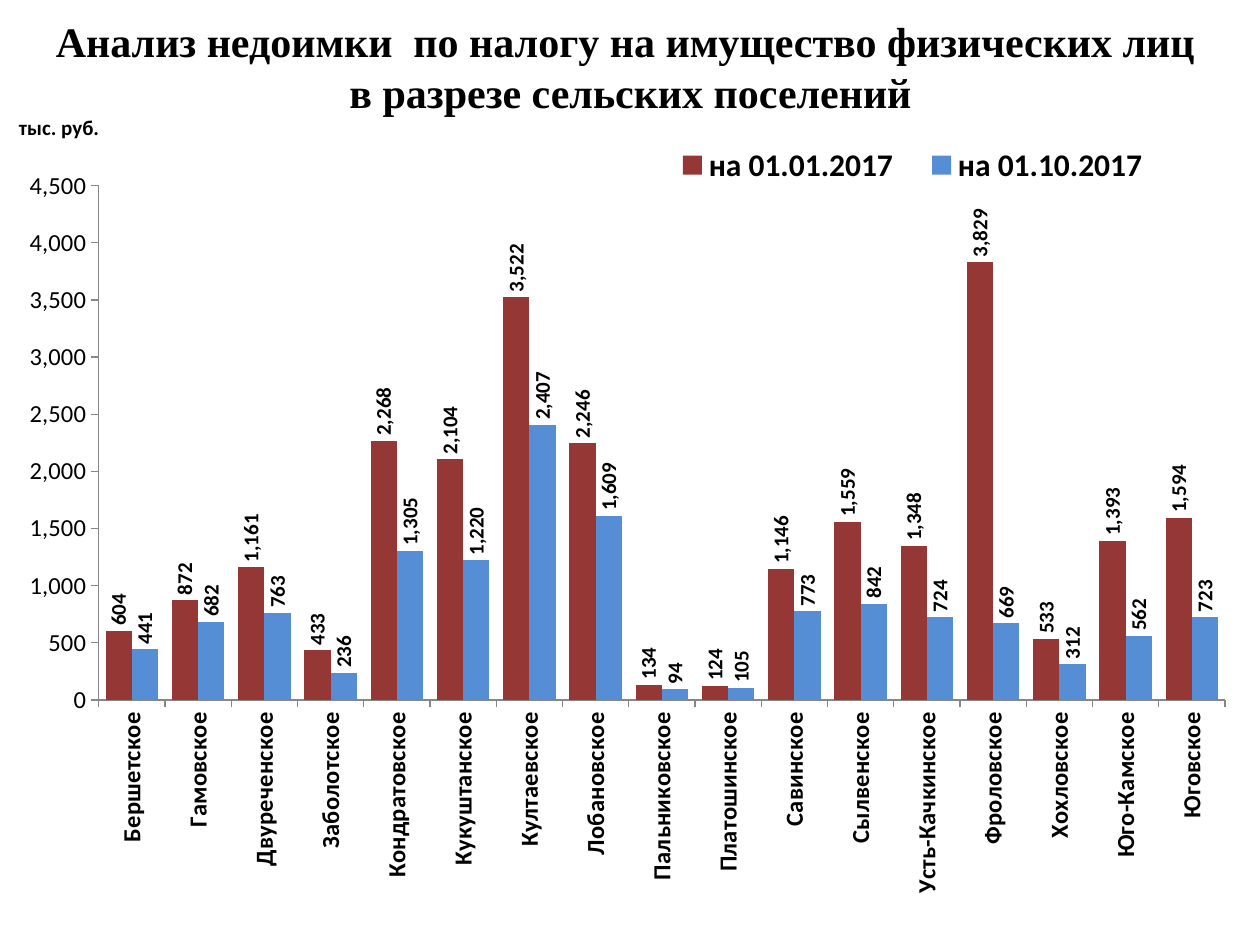
import pptx
import pptx.chart.data
import pptx.dml.color
import pptx.enum.chart
import pptx.enum.text
import pptx.oxml
import pptx.oxml.ns
import pptx.util

Inches, Pt = pptx.util.Inches, pptx.util.Pt
enum = pptx.enum.chart
qn = pptx.oxml.ns.qn

TITLE = "Анализ недоимки  по налогу на имущество физических лиц \vв разрезе сельских поселений"
UNIT = "тыс. руб."
DATES = [("на 01.01.2017", "953735"), ("на 01.10.2017", "558ED5")]
ROWS = [
    ("Бершетское", 604, 441),
    ("Гамовское", 872, 682),
    ("Двуреченское", 1161, 763),
    ("Заболотское", 433, 236),
    ("Кондратовское", 2268, 1305),
    ("Кукуштанское", 2104, 1220),
    ("Култаевское", 3522, 2407),
    ("Лобановское", 2246, 1609),
    ("Пальниковское", 134, 94),
    ("Платошинское", 124, 105),
    ("Савинское", 1146, 773),
    ("Сылвенское", 1559, 842),
    ("Усть-Качкинское", 1348, 724),
    ("Фроловское", 3829, 669),
    ("Хохловское", 533, 312),
    ("Юго-Камское", 1393, 562),
    ("Юговское", 1594, 723),
]


def color(code):
    return pptx.dml.color.RGBColor.from_string(code)


def style(font, size, bold=False, name="Calibri"):
    font.size, font.bold, font.name = Pt(size), bold, name
    font.color.rgb = color("000000")


def turn(part, angle):
    """Rotate the text of a chart part by whole degrees."""
    body = next(part.iter(qn("a:bodyPr")))
    body.set("rot", str(angle * 60000))
    body.set("vert", "horz")


def place(part, index, x, y, w=None, h=None, inner=False):
    """Give a chart part a manual layout in fractions of the chart."""
    for old in part.findall(qn("c:layout")):
        part.remove(old)
    tags = [("layoutTarget", "inner")] if inner else []
    tags += [("xMode", "edge"), ("yMode", "edge"), ("x", x), ("y", y)]
    if w:
        tags += [("w", w), ("h", h)]
    body = "".join(f'<c:{tag} val="{val}"/>' for tag, val in tags)
    space = pptx.oxml.ns.nsdecls("c")
    xml = f"<c:layout {space}><c:manualLayout>{body}</c:manualLayout></c:layout>"
    part.insert(index, pptx.oxml.parse_xml(xml))


def add_title(slide):
    box = slide.shapes.add_textbox(Inches(0.2), Inches(0.21), Inches(9.61), Inches(0.63))
    frame = box.text_frame
    frame.word_wrap = True
    frame.vertical_anchor = pptx.enum.text.MSO_ANCHOR.MIDDLE
    para = frame.paragraphs[0]
    para.text = TITLE
    para.alignment = pptx.enum.text.PP_ALIGN.CENTER
    style(para.font, 24, True, "Times New Roman")


def add_bars(slide):
    data = pptx.chart.data.CategoryChartData(number_format="#,##0")
    names, *sums = zip(*ROWS)
    data.categories = names
    for (date, _), vals in zip(DATES, sums):
        data.add_series(date, vals)
    chart = slide.shapes.add_chart(
        enum.XL_CHART_TYPE.COLUMN_CLUSTERED,
        Inches(0.12), Inches(0.6), Inches(9.76), Inches(6.77), data).chart
    chart.has_title = False
    style(chart.font, 18)

    plot = chart.plots[0]
    plot.gap_width, plot.overlap = 52, 0
    plot.vary_by_categories = False
    for bars, (_, code) in zip(plot.series, DATES):
        bars.format.fill.solid()
        bars.format.fill.fore_color.rgb = color(code)
        bars.invert_if_negative = False
        tags = bars.data_labels
        tags.show_value = True
        tags.number_format, tags.number_format_is_linked = "#,##0", False
        tags.position = enum.XL_LABEL_POSITION.OUTSIDE_END
        style(tags.font, 12, True)
        turn(bars.data_labels._element, -90)

    cats, vals = chart.category_axis, chart.value_axis
    for axis in (cats, vals):
        axis.has_major_gridlines = False
        axis.major_tick_mark = enum.XL_TICK_MARK.OUTSIDE
        axis.format.line.color.rgb = color("868686")
        style(axis.tick_labels.font, 14, axis is cats)
    turn(cats._element, -90)
    vals.minimum_scale, vals.maximum_scale, vals.major_unit = 0, 4500, 500
    vals.tick_labels.number_format = "#,##0"
    vals.tick_labels.number_format_is_linked = False
    unit = vals.axis_title
    para = unit.text_frame.paragraphs[0]
    para.text = UNIT
    style(para.font, 12, True)
    turn(unit._element, 0)
    place(unit._element, 1, 0, 0.04)

    chart.has_legend = True
    key = chart.legend
    key.position = enum.XL_LEGEND_POSITION.BOTTOM
    key.include_in_layout = False
    style(key.font, 18, True)
    place(key._element, 1, 0.52, 0.08, 0.42, 0.05)
    area = next(chart._chartSpace.iter(qn("c:plotArea")))
    place(area, 0, 0.068, 0.129, 0.916, 0.603, inner=True)


def main():
    deck = pptx.Presentation()
    deck.slide_width, deck.slide_height = Inches(10), Inches(7.5)
    slide = deck.slides.add_slide(deck.slide_layouts[6])
    add_title(slide)
    add_bars(slide)
    deck.save("out.pptx")


if __name__ == "__main__":
    main()
